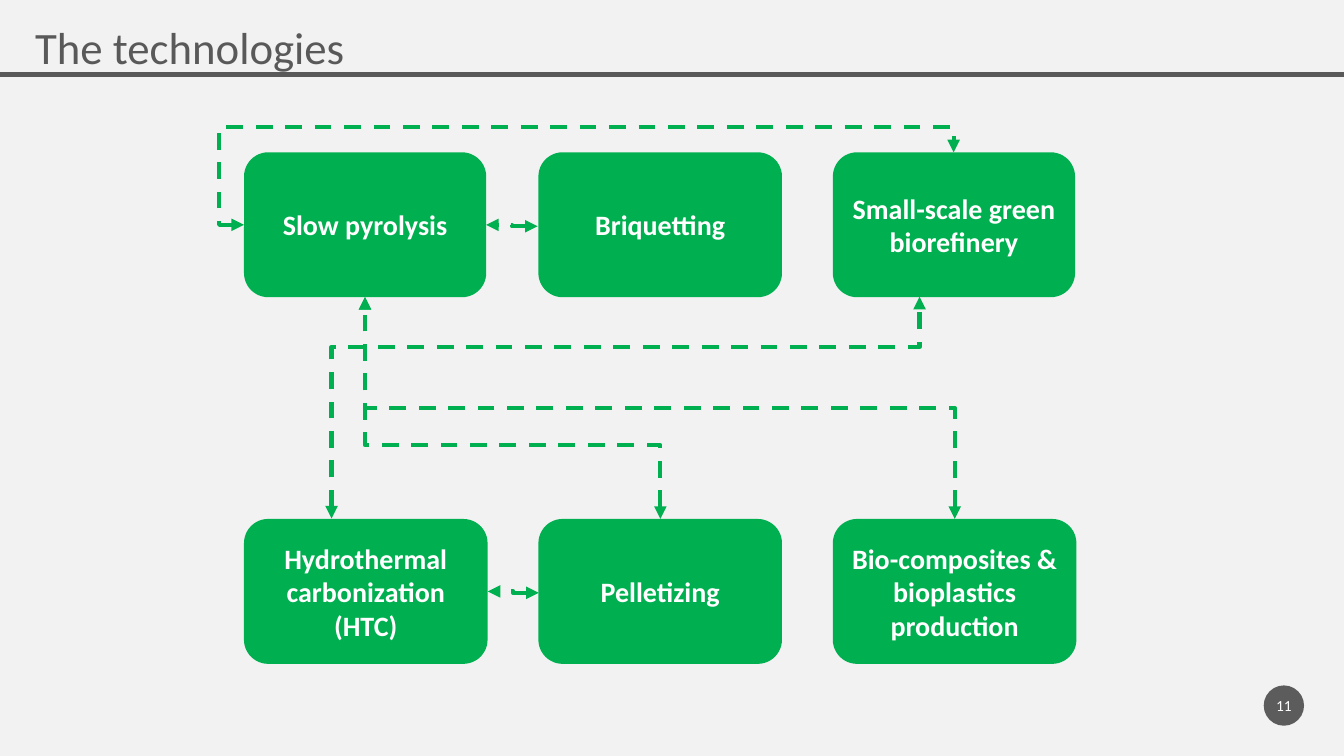
from pptx import Presentation
from pptx.util import Pt
from pptx.dml.color import RGBColor
from pptx.enum.dml import MSO_LINE as Dash
from pptx.enum.shapes import MSO_SHAPE as Shape, MSO_CONNECTOR as Link
from pptx.enum.text import PP_ALIGN as Align, MSO_ANCHOR as Anchor, MSO_AUTO_SIZE as Auto
from pptx.oxml.ns import qn
from lxml.etree import SubElement as Sub


def paint(fill, color):
    fill.solid()
    fill.fore_color.rgb = RGBColor.from_string(color)


def write(shape, text, size, color, bold=False, **frame):
    for key, value in frame.items():
        setattr(shape.text_frame, key, value)
    para = shape.text_frame.paragraphs[0]
    run = para.add_run()
    run.text = text
    for key, value in {"name": "Calibri", "size": Pt(size), "bold": bold}.items():
        setattr(run.font, key, value)
    paint(run.font.fill, color)
    return para


GREEN, GREY, WHITE = "00B050", "595959", "FFFFFF"

deck = Presentation()
deck.slide_width, deck.slide_height = Pt(960), Pt(540)
slide = deck.slides.add_slide(deck.slide_layouts[6])
paint(slide.background.fill, "F2F2F2")
shapes = slide.shapes

rule = shapes.add_connector(Link.STRAIGHT, 0, Pt(53.3), Pt(960), Pt(53.3))
paint(rule.line.fill, GREY)
rule.line.width = Pt(3.5)
Sub(rule._element.spPr, qn("a:effectLst"))

badge = shapes.add_shape(Shape.OVAL, Pt(902.7), Pt(489.6), Pt(28.8), Pt(28.8))
badge.shadow.inherit = False
paint(badge.fill, "1D1D1D")
tint = badge._element.spPr.find(qn("a:solidFill"))[0]
Sub(tint, qn("a:alpha"), val="70000")
badge.line.fill.background()
para = write(badge, "11", 11, WHITE, vertical_anchor=Anchor.MIDDLE,
             margin_left=Pt(1.4), margin_right=Pt(1.4))
para.alignment = Align.CENTER

title = shapes.add_textbox(Pt(18), Pt(10.8), Pt(419), Pt(46))
write(title, "The technologies", 32, GREY, word_wrap=True, auto_size=Auto.SHAPE_TO_FIT_TEXT)

rows = [
    (108.8, [("Slow pyrolysis", 173), ("Briquetting", 174),
             ("Small-scale green biorefinery", 173)]),
    (370.7, [("Hydrothermal carbonization (HTC)", 174), ("Pelletizing", 174),
             ("Bio-composites & bioplastics production", 174)]),
]
for top, cells in rows:
    for col, (text, wide) in enumerate(cells):
        box = shapes.add_shape(Shape.ROUNDED_RECTANGLE, Pt(174.3 + 210.3 * col), Pt(top),
                               Pt(wide), Pt(103.5))
        box.shadow.inherit = False
        paint(box.fill, GREEN)
        box.line.fill.background()
        para = write(box, text, 20, WHITE, True, word_wrap=True, vertical_anchor=Anchor.MIDDLE)
        para.alignment = Align.CENTER

links = [
    ((174.3, 160.6), (681.2, 108.8), 180, "h", [-3500, 134700]),
    ((384.1, 161.6), (347.2, 160.6), 180, "", [50000]),
    ((236.8, 370.4), (656.8, 212), 90, "hv", [77400]),
    ((471.7, 370.7), (260.7, 212.3), 270, "v", [33300]),
    ((682, 370.7), (260.7, 212.3), 270, "v", [50000]),
    ((384.8, 423.4), (348.4, 422.4), 180, "", [50000]),
]
for (x1, y1), (x2, y2), turn, flips, bends in links:
    wide, high = abs(x2 - x1), abs(y2 - y1)
    if turn != 180:
        wide, high = high, wide
    left, top = (x1 + x2 - wide) / 2, (y1 + y2 - high) / 2
    link = shapes.add_connector(Link.ELBOW, Pt(left), Pt(top), Pt(left + wide), Pt(top + high))
    paint(link.line.fill, GREEN)
    link.line.width = Pt(3)
    link.line.dash_style = Dash.DASH
    props = link._element.spPr
    frame = props.find(qn("a:xfrm"))
    frame.set("rot", str(turn * 60000))
    for axis in flips:
        frame.set("flip" + axis.upper(), "1")
    geom = props.find(qn("a:prstGeom"))
    geom.set("prst", f"bentConnector{len(bends) + 2}")
    for num, bend in enumerate(bends, 1):
        Sub(geom.find(qn("a:avLst")), qn("a:gd"), name=f"adj{num}", fmla=f"val {bend}")
    for end in ("a:headEnd", "a:tailEnd"):
        Sub(props.find(qn("a:ln")), qn(end), type="triangle")
    Sub(props, qn("a:effectLst"))

deck.save("out.pptx")
